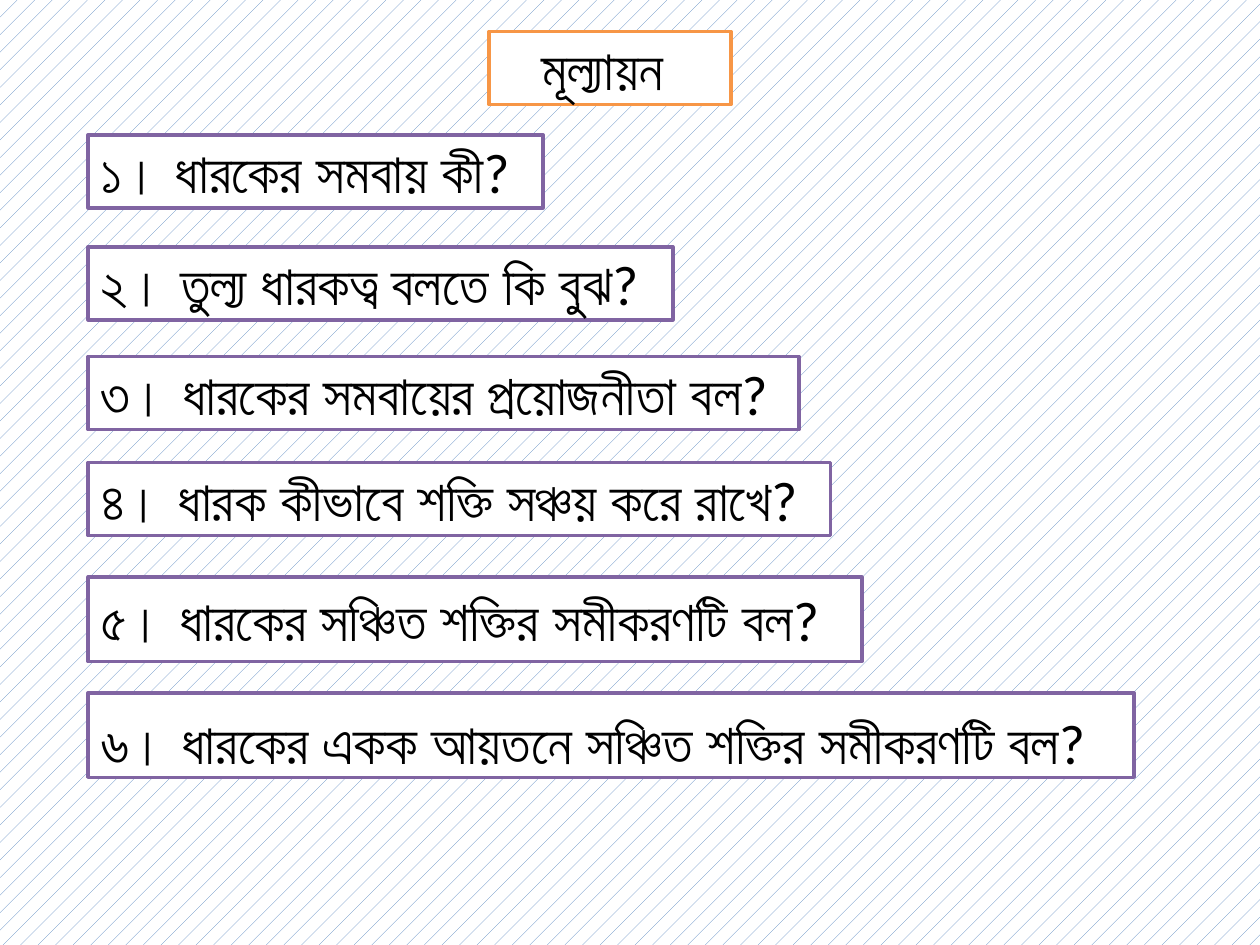
from dataclasses import dataclass
from pptx import Presentation
from pptx.dml.color import RGBColor as Rgb
from pptx.enum.dml import MSO_PATTERN as Pat
from pptx.enum.shapes import MSO_SHAPE as Kind
from pptx.enum.text import MSO_ANCHOR as Anchor, MSO_AUTO_SIZE as Fit, PP_ALIGN as Align
from pptx.util import Inches, Pt


@dataclass(frozen=True)
class Theme:
    font: str = "Calibri"
    size: int = 32
    line: int = 2
    ink: str = "000000"
    paper: str = "FFFFFF"
    hatch: str = "4F81BD"
    head: str = "F79646"
    ask: str = "8064A2"


THEME = Theme()
WIDE, HIGH = 10, 7.5
LEFT = 0.07 * WIDE
LOW, TALL = 0.58, 0.67

TITLE = "মূল্যায়ন "
ASKS = [
    ("১। ধারকের সমবায় কী?", 1.07, 3.61, LOW, 1),
    ("২। তুল্য ধারকত্ব বলতে কি বুঝ?", 1.96, 4.64, LOW, 1),
    ("৩। ধারকের সমবায়ের প্রয়োজনীতা বল?", 2.83, 5.64, LOW, 1),
    ("৪। ধারক কীভাবে শক্তি সঞ্চয় করে রাখে?", 3.67, 5.89, LOW, 1),
    ("৫। ধারকের সঞ্চিত শক্তির সমীকরণটি বল?", 4.58, 6.14, TALL, 1),
    ("৬। ধারকের একক আয়তনে সঞ্চিত শক্তির সমীকরণটি বল?", 5.5, 8.3, TALL, 1.2),
]


def color(code):
    return Rgb.from_string(code)


def style(box, text, edge, align, gap=1):
    box.fill.solid()
    box.fill.fore_color.rgb = color(THEME.paper)
    box.line.color.rgb = color(edge)
    box.line.width = Pt(THEME.line)
    frame = box.text_frame
    frame.auto_size = Fit.NONE
    frame.word_wrap = True
    frame.vertical_anchor = Anchor.MIDDLE
    para = frame.paragraphs[0]
    para.alignment = align
    para.line_spacing = gap
    run = para.add_run()
    run.text = text
    run.font.name = THEME.font
    run.font.size = Pt(THEME.size)
    run.font.color.rgb = color(THEME.ink)


def main():
    deck = Presentation()
    deck.slide_width, deck.slide_height = Inches(WIDE), Inches(HIGH)
    slide = deck.slides.add_slide(deck.slide_layouts[5])

    back = slide.background.fill
    back.patterned()
    back.pattern = Pat.PERCENT_5
    back.fore_color.rgb = color(THEME.hatch)
    back.back_color.rgb = color(THEME.paper)

    title = slide.shapes.title
    title.left, title.top = Inches(3.88), Inches(0.25)
    title.width, title.height = Inches(1.92), Inches(LOW)
    style(title, TITLE, THEME.head, Align.CENTER)

    for text, top, width, height, gap in ASKS:
        area = map(Inches, (LEFT, top, width, height))
        box = slide.shapes.add_shape(Kind.RECTANGLE, *area)
        box.shadow.inherit = False
        style(box, text, THEME.ask, Align.LEFT, gap)

    deck.save("out.pptx")


if __name__ == "__main__":
    main()
